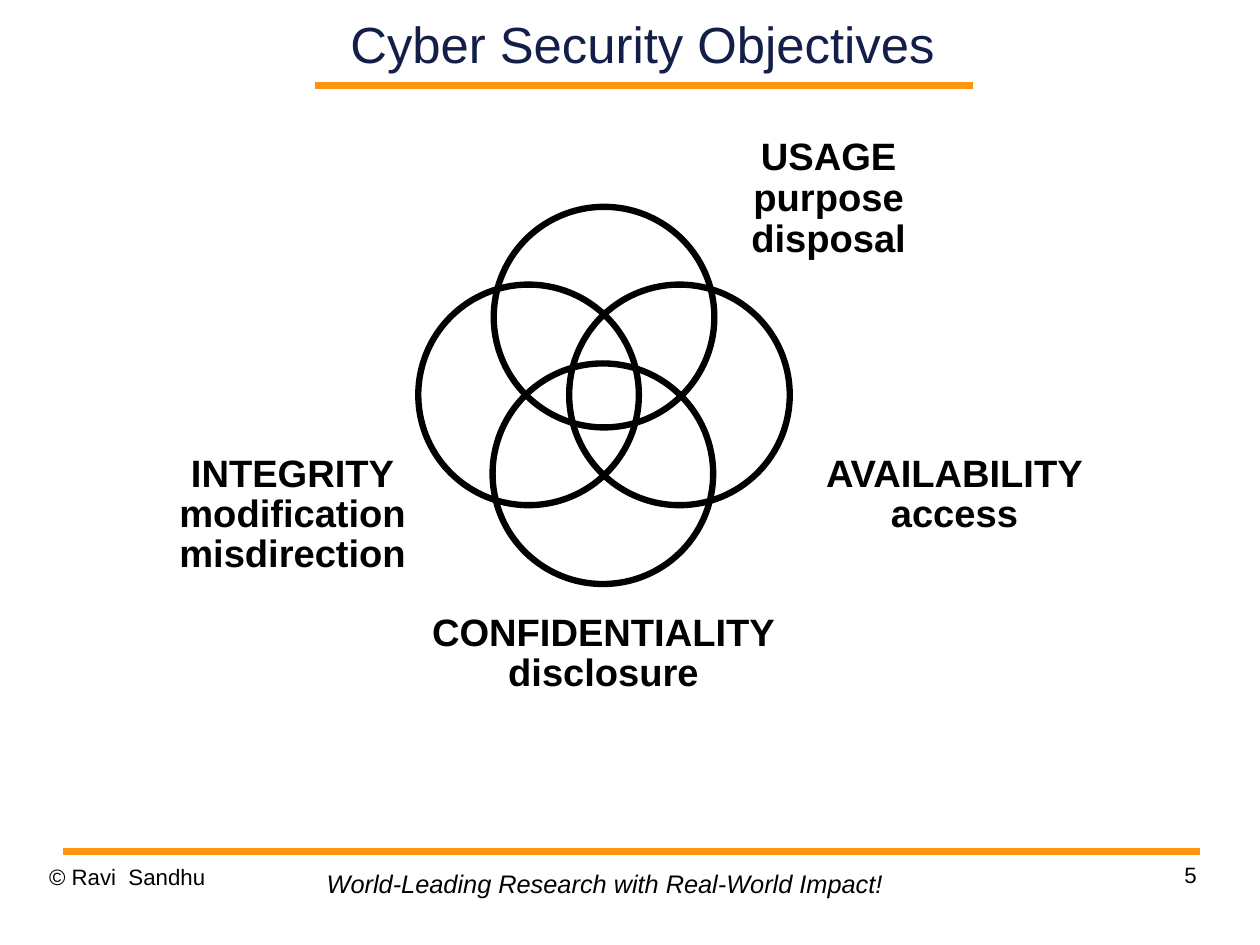
from pptx import Presentation
from pptx.dml.color import RGBColor
from pptx.enum.shapes import MSO_CONNECTOR as Connector, MSO_SHAPE as Shape
from pptx.enum.text import MSO_ANCHOR as Anchor, MSO_AUTO_SIZE as AutoSize, PP_ALIGN as Align
from pptx.oxml.ns import qn
from pptx.util import Cm, Inches, Pt
from lxml.etree import SubElement

BLACK, NAVY, ORANGE = "000000", "131F49", "FF950E"


def color(value):
    return RGBColor.from_string(value)


class SlideBuilder:
    """Draws styled elements on the current slide."""

    font_name = "Arial"

    def __init__(self, slide):
        self.slide = slide

    def rule(self, left, right, y):
        rule = self.slide.shapes.add_connector(
            Connector.STRAIGHT, Inches(left), Inches(y), Inches(right), Inches(y))
        rule.line.color.rgb = color(ORANGE)
        rule.line.width = Pt(4.31)
        SubElement(rule._element.spPr, qn("a:effectLst"))

    def circle(self, left, top, diameter):
        circle = self.slide.shapes.add_shape(
            Shape.OVAL, Inches(left), Inches(top), Inches(diameter), Inches(diameter))
        circle.shadow.inherit = False
        circle.fill.background()
        circle.line.color.rgb = color(BLACK)
        circle.line.width = Pt(4)

    def text(self, lines, box, size, align=Align.LEFT, spacing=1.0, insets=(0, 0),
             anchor=Anchor.TOP, ink=BLACK, bold=False, italic=False, grow=False):
        frame = self.slide.shapes.add_textbox(*map(Inches, box)).text_frame
        frame.word_wrap = not grow
        frame.auto_size = AutoSize.SHAPE_TO_FIT_TEXT if grow else AutoSize.NONE
        frame.vertical_anchor = anchor
        frame.margin_left = frame.margin_right = Inches(insets[0])
        frame.margin_top = frame.margin_bottom = Inches(insets[1])
        for index, line in enumerate(lines):
            paragraph = frame.add_paragraph() if index else frame.paragraphs[0]
            paragraph.alignment = align
            paragraph.line_spacing = spacing
            run = paragraph.add_run()
            run.text = line
            run.font.name = self.font_name
            run.font.size = Pt(size)
            run.font.bold = bold
            run.font.italic = italic
            run.font.color.rgb = color(ink)

    def objective(self, lines, box, spacing=0.87, insets=(0.07, 0.03)):
        self.text(lines, box, 24, Align.CENTER, spacing, insets, bold=True, grow=True)


def main():
    deck = Presentation()
    deck.slide_width, deck.slide_height = Cm(28), Cm(21)
    builder = SlideBuilder(deck.slides.add_slide(deck.slide_layouts[6]))

    builder.rule(2.76, 8.51, 0.75)
    builder.rule(0.55, 10.5, 7.45)
    builder.text(["Cyber Security Objectives"], (2.41, 0, 6.43, 0.75), 32,
                 Align.CENTER, anchor=Anchor.MIDDLE, ink=NAVY)

    venn_left, venn_top = 4.32, 2.49
    for dx, dy in ((0.66, 0), (-0.66, 0), (-0.01, 0.69), (0, -0.68)):
        builder.circle(venn_left + dx, venn_top + dy, 1.93)

    builder.objective(["USAGE", "purpose", "disposal"], (6.47, 1.15, 1.56, 1.19),
                      0.9, (0.1, 0.05))
    builder.objective(["INTEGRITY", "modification", "misdirection"], (1.49, 3.96, 2.14, 1.11))
    builder.objective(["AVAILABILITY", "access"], (7.04, 3.96, 2.62, 0.75))
    builder.objective(["CONFIDENTIALITY", "disclosure"], (3.62, 5.35, 3.32, 0.75))

    builder.text(["© Ravi  Sandhu"], (0.43, 7.55, 2.57, 0.57), 14, spacing=1.01)
    builder.text(["World-Leading Research with Real-World Impact!"],
                 (2.76, 7.55, 5.08, 0.37), 16, insets=(0.1, 0.05), italic=True, grow=True)
    builder.text(["5"], (7.9, 7.53, 2.57, 0.57), 14, Align.RIGHT, 1.01)

    deck.save("out.pptx")


if __name__ == "__main__":
    main()
